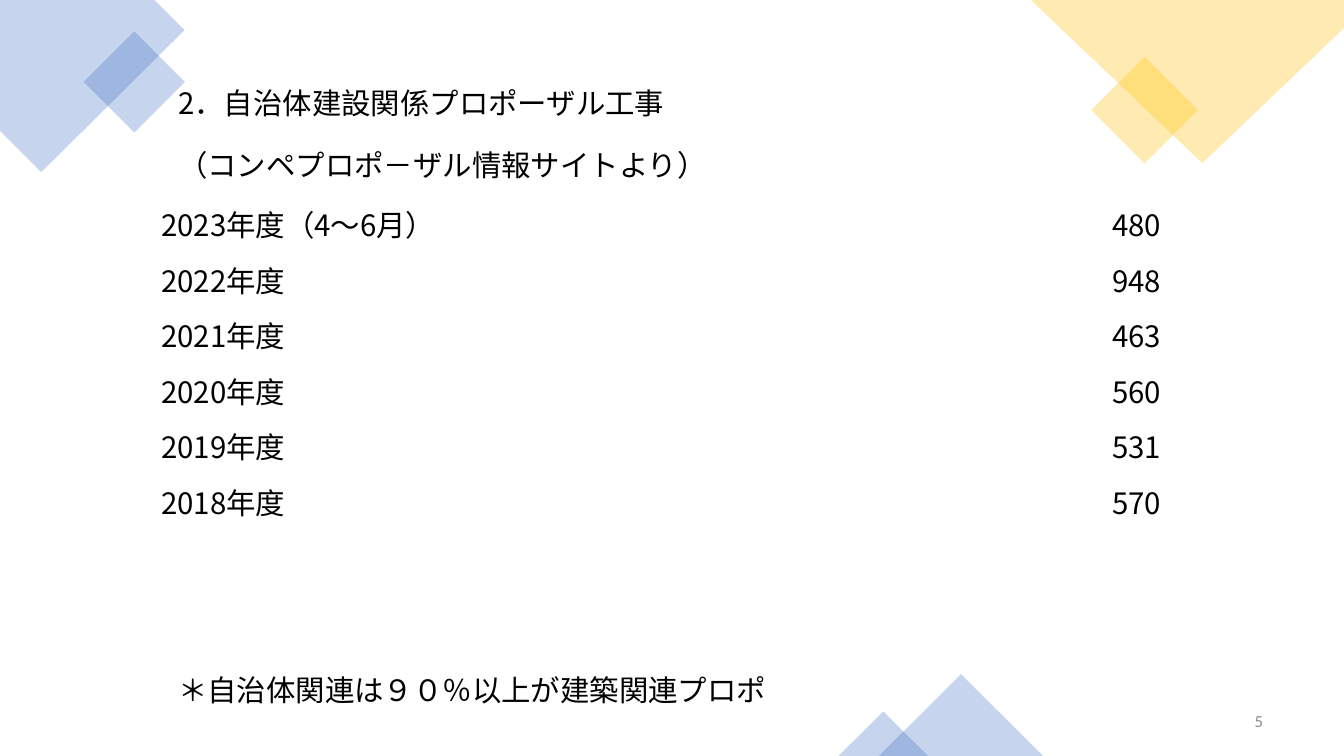
from lxml import etree
from pptx import Presentation
from pptx.dml.color import RGBColor
from pptx.enum.shapes import MSO_SHAPE
from pptx.enum.text import MSO_ANCHOR, PP_ALIGN
from pptx.oxml.ns import qn
from pptx.util import Cm, Pt

DIAMOND, TRIANGLE = MSO_SHAPE.DIAMOND, MSO_SHAPE.ISOSCELES_TRIANGLE
TOP, MIDDLE = MSO_ANCHOR.TOP, MSO_ANCHOR.MIDDLE
LEFT, RIGHT = PP_ALIGN.LEFT, PP_ALIGN.RIGHT
BLUE, YELLOW, BLACK, GREY = "4472C4", "FFC000", "000000", "8C8C8C"
JP_FONT = "Noto Sans CJK JP"
NO_GRID_STYLE = "{2D5ABB26-0587-4C30-8999-92F81FD0307C}"

HEADINGS = ["2．自治体建設関係プロポーザル工事", "（コンペプロポ－ザル情報サイトより）"]
COUNTS = [("2023年度（4～6月）", "480"), ("2022年度", "948"), ("2021年度", "463"),
          ("2020年度", "560"), ("2019年度", "531"), ("2018年度", "570")]
FOOTNOTE = "＊自治体関連は９０％以上が建築関連プロポ"
COLUMNS = [17.73, 7.57, 0.58]
ROWS = [1.57] * len(HEADINGS) + [1.4] * len(COUNTS) + [1.63] * 2 + [1.57]

HEADING_CELL = dict(vertical_anchor=TOP, margin_left=Cm(0.48), margin_right=Cm(0.48),
                    margin_top=Cm(0.25), margin_bottom=Cm(0.25))
COUNT_CELL = dict(vertical_anchor=MIDDLE, margin_left=Cm(0.05), margin_right=Cm(0.05),
                  margin_top=Cm(0.05), margin_bottom=0)


def rgb(color):
    return RGBColor.from_string(color)


def set_attributes(obj, values):
    for name, value in values.items():
        setattr(obj, name, value)


def tint(sp, color):
    """Fill a decoration at 30% opacity, without line or shadow."""
    sp.shadow.inherit = False
    sp.line.fill.background()
    sp.fill.solid()
    sp.fill.fore_color.rgb = rgb(color)
    clr = sp.fill._xPr.find(qn("a:solidFill"))[0]
    etree.SubElement(clr, qn("a:alpha"), val="30000")


def add_preset(s, kind, box, color):
    tint(s.shapes.add_shape(kind, *map(Cm, box)), color)


def add_corner(s, points, color):
    points = [(Cm(x), Cm(y)) for x, y in points]
    builder = s.shapes.build_freeform(*points[0])
    builder.add_line_segments(points[1:], close=True)
    tint(builder.convert_to_shape(), color)


def write(tf, text, size, font, color, align):
    p = tf.paragraphs[0]
    p.alignment = align
    r = p.add_run()
    r.text = text
    set_attributes(r.font, dict(size=Pt(size), name=font, bold=False))
    r.font.color.rgb = rgb(color)
    etree.SubElement(r.font._element, qn("a:ea"), typeface=font)


def write_cell(cell, text, layout, align=LEFT):
    set_attributes(cell, layout)
    write(cell.text_frame, text, 21, JP_FONT, BLACK, align)


def add_count_table(s):
    frame = s.shapes.add_table(len(ROWS), len(COLUMNS), Cm(4.01), Cm(1.78),
                               Cm(sum(COLUMNS)), Cm(sum(ROWS)))
    next(frame.element.iter(qn("a:tableStyleId"))).text = NO_GRID_STYLE
    table = frame.table
    set_attributes(table, dict(first_row=False, horz_banding=False))
    for column, width in zip(table.columns, COLUMNS):
        column.width = Cm(width)
    for row, height in zip(table.rows, ROWS):
        row.height = Cm(height)
    for cell in table.iter_cells():
        cell.fill.background()

    for i, heading in enumerate(HEADINGS):
        table.cell(i, 0).merge(table.cell(i, 1))
        write_cell(table.cell(i, 0), heading, HEADING_CELL)
    for i, (year, count) in enumerate(COUNTS, len(HEADINGS)):
        write_cell(table.cell(i, 0), year, COUNT_CELL)
        write_cell(table.cell(i, 1), count, COUNT_CELL, RIGHT)
    last = len(ROWS) - 1
    table.cell(last, 0).merge(table.cell(last, 2))
    write_cell(table.cell(last, 0), FOOTNOTE, HEADING_CELL)


def add_page_number(s, number):
    tf = s.shapes.add_textbox(Cm(24.46), Cm(17.65), Cm(7.62), Cm(1.02)).text_frame
    set_attributes(tf, dict(word_wrap=True, vertical_anchor=MIDDLE))
    write(tf, number, 12, "Calibri", GREY, RIGHT)


def main():
    prs = Presentation()
    set_attributes(prs, dict(slide_width=Cm(33.87), slide_height=Cm(19.05)))
    s = prs.slides.add_slide(prs.slide_layouts[6])
    add_corner(s, [(3.89, 0), (0, 0), (0, 3.3), (1.04, 4.34), (4.65, 0.76)], BLUE)
    add_preset(s, DIAMOND, (2.11, 0.79, 2.55, 2.55), BLUE)
    add_preset(s, DIAMOND, (27.5, 1.43, 2.69, 2.69), YELLOW)
    add_corner(s, [(33.87, 0), (25.98, 0), (30.3, 4.11), (33.87, 0.71)], YELLOW)
    add_page_number(s, "5")
    add_preset(s, TRIANGLE, (22.15, 16.99, 4.14, 2.06), BLUE)
    add_preset(s, TRIANGLE, (21.13, 17.93, 2.26, 1.12), BLUE)
    add_count_table(s)
    prs.save("out.pptx")


if __name__ == "__main__":
    main()
